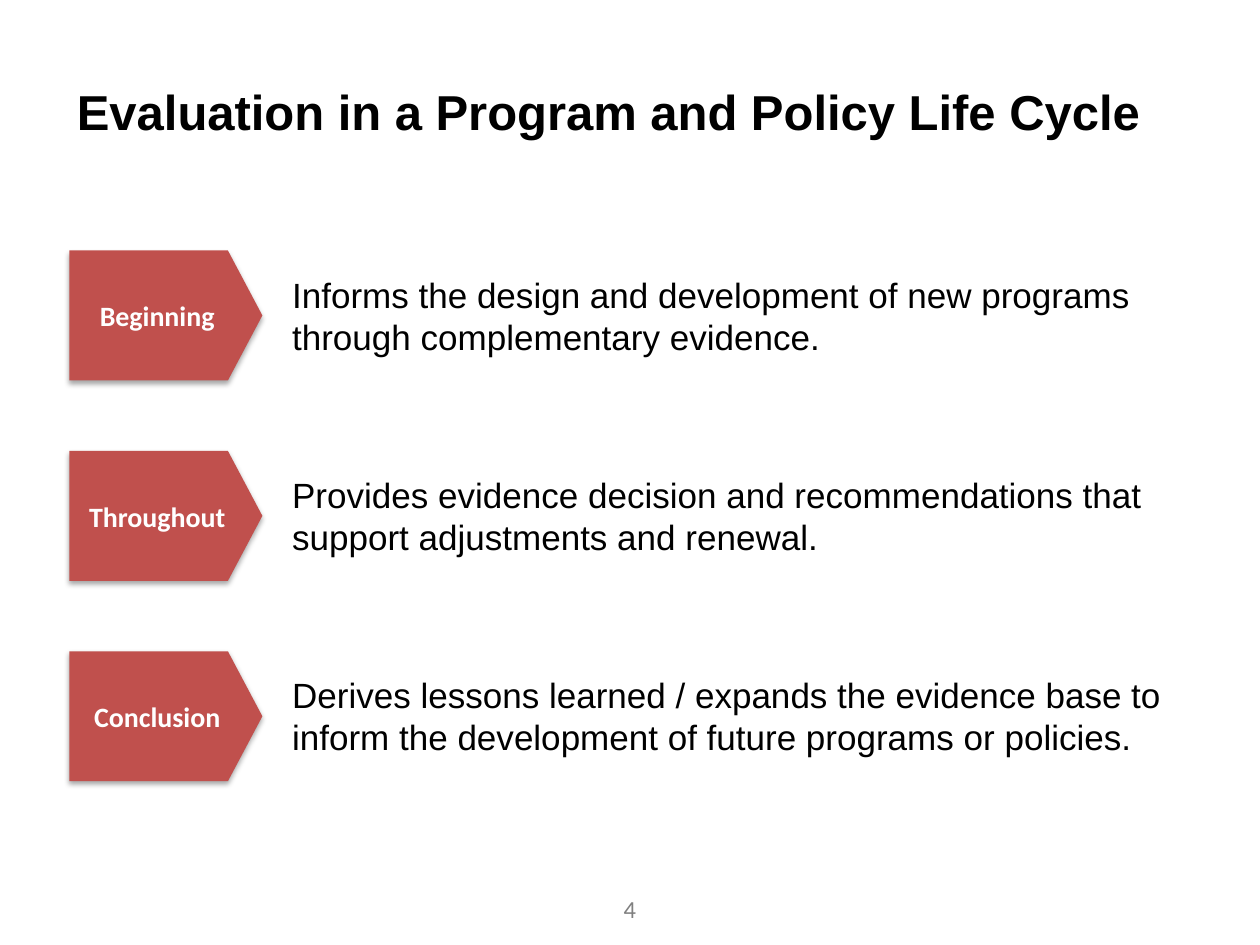
from lxml.etree import SubElement
from pptx import Presentation
from pptx.dml.color import RGBColor
from pptx.enum.shapes import MSO_SHAPE
from pptx.enum.text import MSO_ANCHOR, PP_ALIGN
from pptx.oxml.ns import qn
from pptx.util import Cm, Pt

TITLE = "Evaluation in a Program and Policy Life Cycle"
STAGES = [
    ("Beginning", "Informs the design and development of new programs "
                  "through complementary evidence."),
    ("Throughout", "Provides evidence decision and recommendations that "
                   "support adjustments and renewal."),
    ("Conclusion", "Derives lessons learned / expands the evidence base to "
                   "inform the development of future programs or policies."),
]
PAGE_NUMBER = "4"

RED = "C0504D"
TITLE_FONT = {"name": "Arial", "size": Pt(28), "bold": True, "color": "000000"}
BODY_FONT = {"name": "Arial", "size": Pt(20), "color": "000000"}
STAGE_FONT = {"name": "Calibri", "size": Pt(16), "bold": True, "color": "FFFFFF"}
NUMBER_FONT = {"name": "Calibri", "size": Pt(14), "color": "808080"}

FIRST_TOP, PITCH = 5.05, 4.04
ARROW_LEFT, ARROW_W, ARROW_H = 1.4, 3.89, 2.62
BODY_LEFT, BODY_W, BODY_H = 5.64, 18.49, 1.96


def rgb(value):
    return RGBColor.from_string(value)


def write(sp, text, font, align=PP_ALIGN.LEFT, anchor=MSO_ANCHOR.TOP):
    tf = sp.text_frame
    tf.word_wrap = True
    tf.vertical_anchor = anchor
    p = tf.paragraphs[0]
    p.alignment = align
    r = p.add_run()
    r.text = text
    for key, value in font.items():
        if key == "color":
            r.font.color.rgb = rgb(value)
        else:
            setattr(r.font, key, value)
    return tf


def add_text(shapes, box, text, font, **layout):
    sp = shapes.add_textbox(*map(Cm, box))
    return write(sp, text, font, **layout)


def add_soft_shadow(sp):
    """Cast a short, blurred black shadow straight down."""
    sp.shadow.inherit = False
    effects = sp._element.spPr.find(qn("a:effectLst"))
    shadow = SubElement(effects, qn("a:outerShdw"), blurRad="40000",
                        dist="23000", dir="5400000", rotWithShape="0")
    color = SubElement(shadow, qn("a:srgbClr"), val="000000")
    SubElement(color, qn("a:alpha"), val="35000")


def add_stage(s, top, label, description):
    shapes = s.shapes.add_group_shape().shapes
    arrow = shapes.add_shape(MSO_SHAPE.PENTAGON, Cm(ARROW_LEFT), Cm(top),
                             Cm(ARROW_W), Cm(ARROW_H))
    arrow.adjustments[0] = 0.265
    arrow.fill.solid()
    arrow.fill.fore_color.rgb = rgb(RED)
    arrow.line.fill.background()
    add_soft_shadow(arrow)
    write(arrow, label, STAGE_FONT, PP_ALIGN.CENTER, MSO_ANCHOR.MIDDLE)
    body_top = top + (ARROW_H - BODY_H) / 2
    add_text(shapes, (BODY_LEFT, body_top, BODY_W, BODY_H), description, BODY_FONT)


def main():
    prs = Presentation()
    prs.slide_width, prs.slide_height = Cm(25.4), Cm(19.05)
    s = prs.slides.add_slide(prs.slide_layouts[6])

    add_text(s.shapes, (0, 17.9, 25.4, 0.86), PAGE_NUMBER, NUMBER_FONT,
             align=PP_ALIGN.CENTER)
    tf = add_text(s.shapes, (1.3, 0.79, 24.1, 1.85), TITLE, TITLE_FONT,
                  anchor=MSO_ANCHOR.MIDDLE)
    tf.margin_top = Cm(1.17)

    for i, (label, description) in enumerate(STAGES):
        add_stage(s, FIRST_TOP + i * PITCH, label, description)

    prs.save("out.pptx")


if __name__ == "__main__":
    main()
